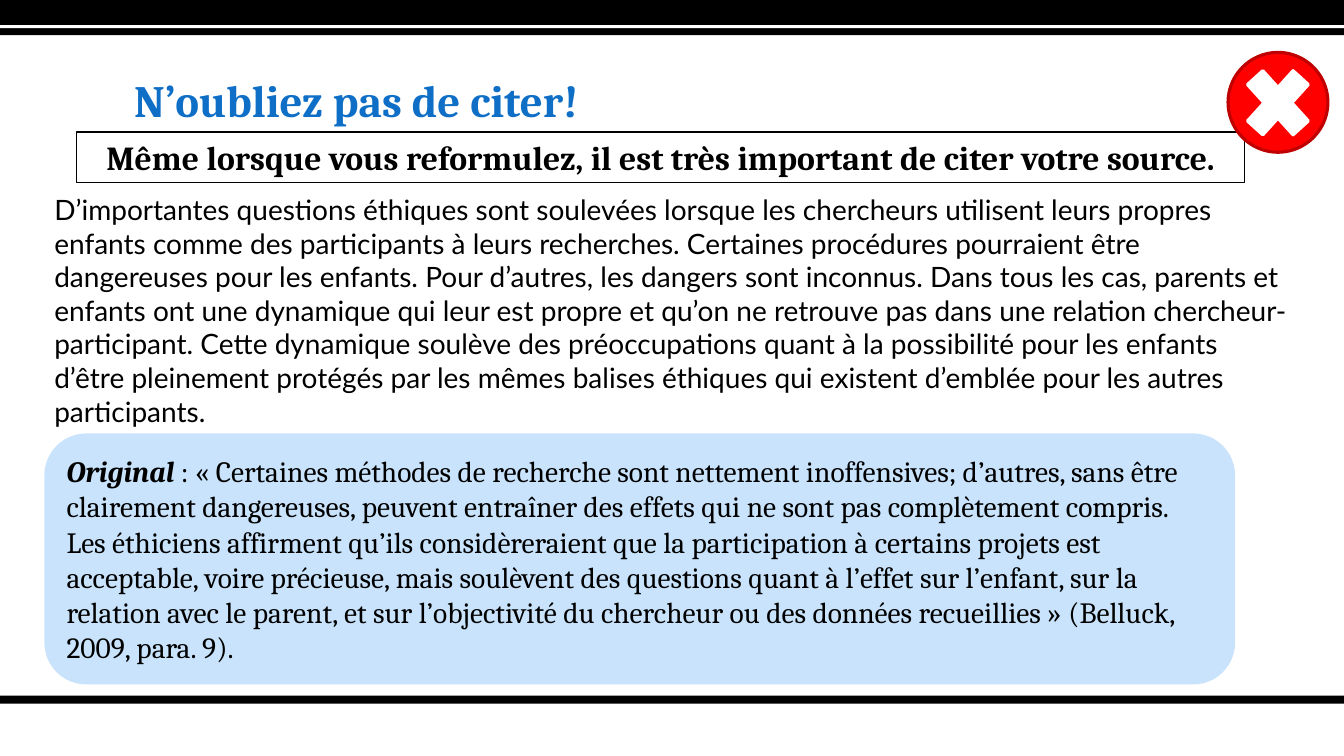
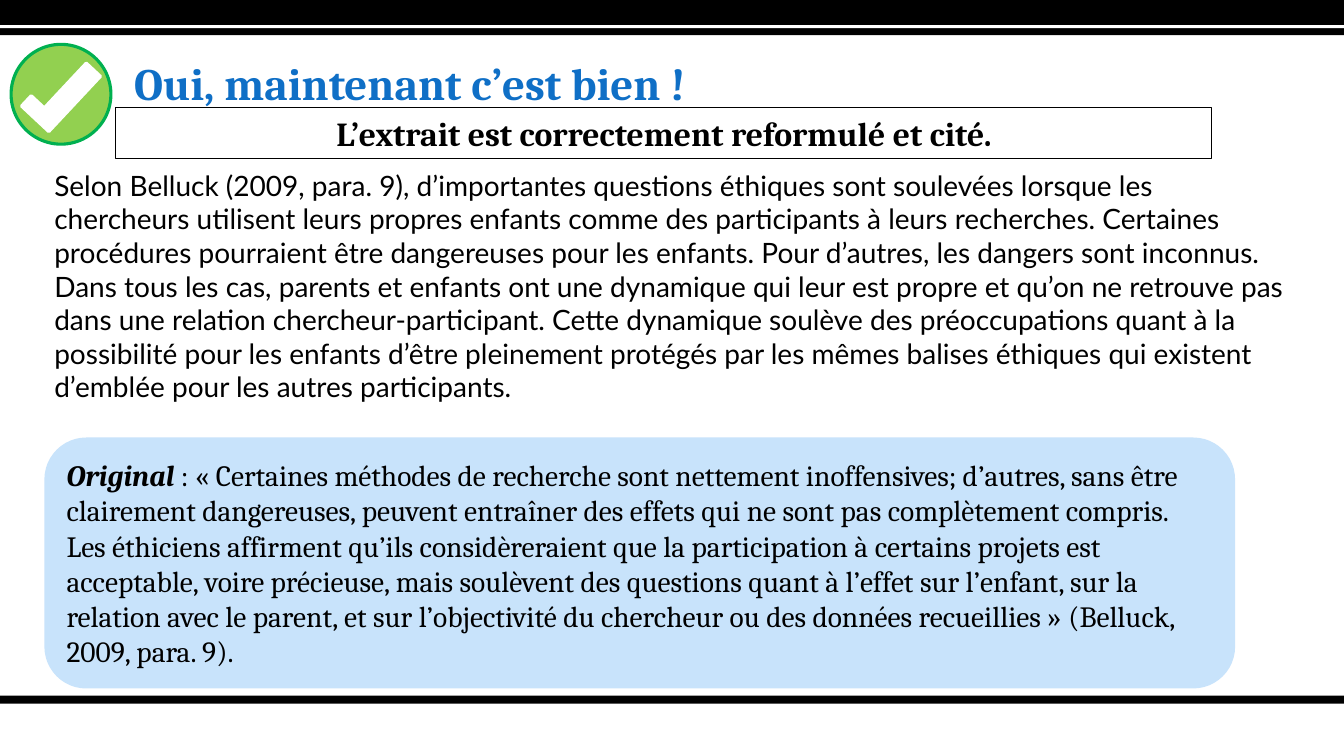
import pptx
import pptx.util
import pptx.dml.color
import pptx.enum.shapes
import pptx.enum.text

Inches = pptx.util.Inches
Pt = pptx.util.Pt
Shape = pptx.enum.shapes.MSO_SHAPE
Align = pptx.enum.text.PP_ALIGN
Anchor = pptx.enum.text.MSO_ANCHOR

COLORS = {
    "black": "000000", "white": "FFFFFF", "title": "0F6FC6", "quote": "C8E3FB",
    "red": "FF0000", "crimson": "C00000", "lime": "92D050", "green": "00B050",
}
SERIF, SANS = "Cambria", "Lato"
WIDTH, HEIGHT = 13.33, 7.5

BANDS = [
    (0, 0.35, "black"),
    (0.25, 0.03, "white"),
    (6.9, 0.08, "black"),
]

BODY = (
    "importantes questions éthiques sont soulevées lorsque les chercheurs utilisent "
    "leurs propres enfants comme des participants à leurs recherches. Certaines "
    "procédures pourraient être dangereuses pour les enfants. Pour d’autres, les "
    "dangers sont inconnus. Dans tous les cas, parents et enfants ont une dynamique "
    "qui leur est propre et qu’on ne retrouve pas dans une relation "
    "chercheur-participant. Cette dynamique soulève des préoccupations quant à la "
    "possibilité pour les enfants d’être pleinement protégés par les mêmes balises "
    "éthiques qui existent d’emblée pour les autres participants."
)
QUOTE = (
    ": « Certaines méthodes de recherche sont nettement inoffensives; d’autres, sans "
    "être clairement dangereuses, peuvent entraîner des effets qui ne sont pas "
    "complètement compris. Les éthiciens affirment qu’ils considèreraient que la "
    "participation à certains projets est acceptable, voire précieuse, mais soulèvent "
    "des questions quant à l’effet sur l’enfant, sur la relation avec le parent, et sur "
    "l’objectivité du chercheur ou des données recueillies » (Belluck, 2009, para. 9)."
)

SLIDES = [
    {
        "title": "N’oubliez pas de citer!", "title_top": 0.46,
        "banner": "Même lorsque vous reformulez, il est très important de citer votre source.",
        "banner_box": (0.76, 1.31, 11.58, 0.5),
        "body": "D’" + BODY, "body_top": 1.86, "quote_top": 4.3,
        "disc": (12.18, 0.52, 0.99, 0.99), "disc_fill": "red", "disc_line": "crimson",
        "mark": Shape.MATH_MULTIPLY, "mark_box": (12.24, 0.54, 0.87, 0.96),
        "turn": 0, "adjust": [],
    },
    {
        "title": "Oui, maintenant c’est bien !", "title_top": 0.29,
        "banner": "L’extrait est correctement reformulé et cité.",
        "banner_box": (1.15, 1.07, 10.87, 0.5),
        "body": "Selon Belluck (2009, para. 9), d’" + BODY, "body_top": 1.62,
        "quote_top": 4.34,
        "disc": (0.11, 0.44, 0.99, 0.99), "disc_fill": "lime", "disc_line": "green",
        "mark": Shape.CORNER, "mark_box": (0.23, 0.72, 0.75, 0.37),
        "turn": 313.1, "adjust": [0.52, 0.38],
    },
]


def color(name):
    return pptx.dml.color.RGBColor.from_string(COLORS[name])


def place(item, box):
    item.left, item.top, item.width, item.height = map(Inches, box)


def add_box(slide, kind, box, fill=None, line=None, weight=2.25):
    item = slide.shapes.add_shape(kind, *map(Inches, box))
    item.shadow.inherit = False
    if fill:
        item.fill.solid()
        item.fill.fore_color.rgb = color(fill)
    else:
        item.fill.background()
    if line:
        item.line.color.rgb = color(line)
        item.line.width = Pt(weight)
    else:
        item.line.fill.background()
    return item


def write(item, runs, size, font, ink="black", align=Align.LEFT, anchor=Anchor.MIDDLE):
    frame = item.text_frame
    frame.word_wrap = True
    frame.auto_size = pptx.enum.text.MSO_AUTO_SIZE.NONE
    frame.vertical_anchor = anchor
    para = frame.paragraphs[0]
    para.alignment = align
    for text, bold, slant in runs:
        run = para.add_run()
        run.text = text
        run.font.name = font
        run.font.size = Pt(size)
        run.font.bold = bold
        run.font.italic = slant
        run.font.color.rgb = color(ink)
    return para


def add_badge(slide, data):
    add_box(slide, Shape.OVAL, data["disc"], data["disc_fill"], data["disc_line"])
    mark = add_box(slide, data["mark"], data["mark_box"], "white", "white")
    mark.rotation = data["turn"]
    for spot, value in enumerate(data["adjust"]):
        mark.adjustments[spot] = value


def build(deck, data):
    slide = deck.slides.add_slide(deck.slide_layouts[5])
    for top, height, fill in BANDS:
        add_box(slide, Shape.RECTANGLE, (0, top, WIDTH, height), fill)

    title = slide.shapes.title
    place(title, (1.23, data["title_top"], 10, 0.85))
    para = write(title, [(data["title"], True, False)], 32, SERIF, "title",
                 anchor=Anchor.BOTTOM)
    para.line_spacing = 0.9

    banner = add_box(slide, Shape.RECTANGLE, data["banner_box"], line="black", weight=0.75)
    write(banner, [(data["banner"], True, False)], 24, SERIF, align=Align.CENTER)
    add_badge(slide, data)

    quote = add_box(slide, Shape.ROUNDED_RECTANGLE,
                    (0.44, data["quote_top"], 11.81, 2.49), "quote")
    write(quote, [("Original ", True, True), (QUOTE, False, False)], 21, SERIF)

    box = (0.44, data["body_top"], 12.49, 3.15)
    body = slide.shapes.add_textbox(*map(Inches, box))
    write(body, [(data["body"], False, False)], 20, SANS, anchor=Anchor.TOP)


def main():
    deck = pptx.Presentation()
    deck.slide_width = Inches(WIDTH)
    deck.slide_height = Inches(HEIGHT)
    for data in SLIDES:
        build(deck, data)
    deck.save("out.pptx")


if __name__ == "__main__":
    main()
